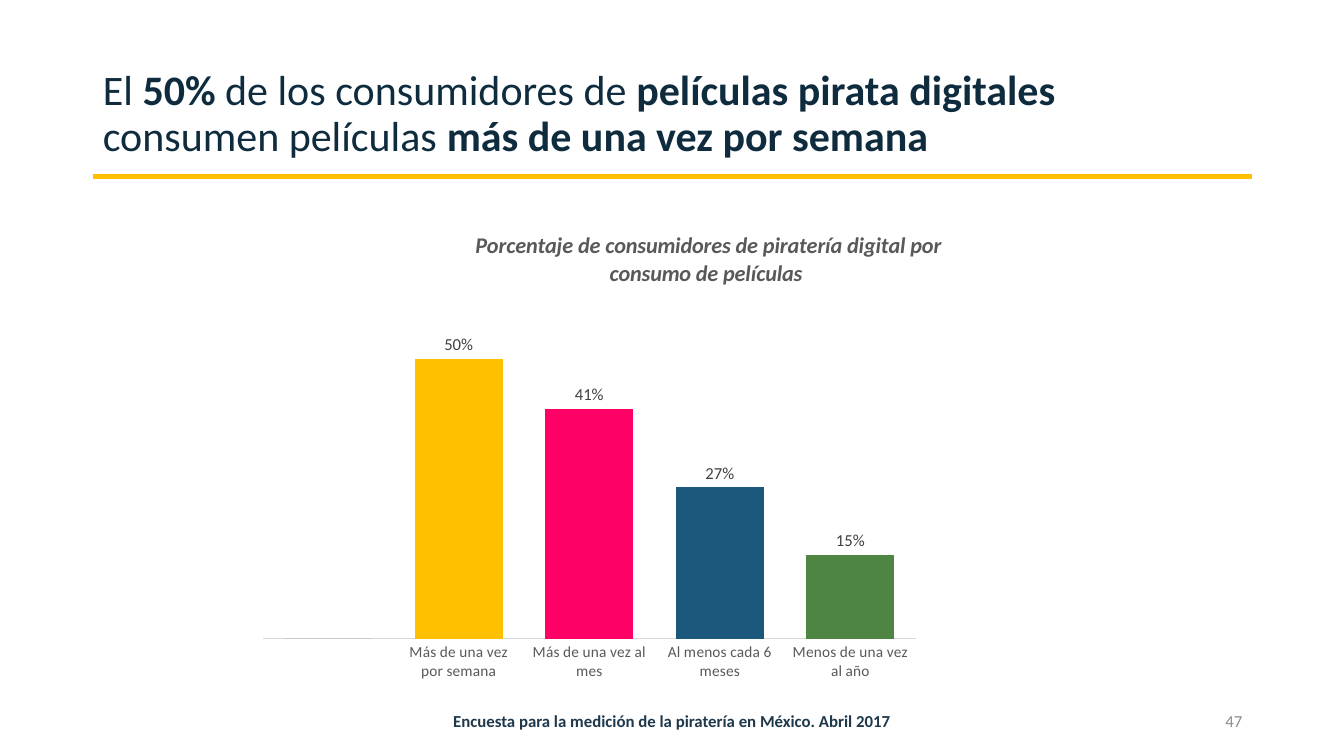
import pptx
import pptx.util
import pptx.chart.data
import pptx.dml.color
import pptx.enum.chart
import pptx.enum.shapes
import pptx.enum.text
import pptx.oxml
import pptx.oxml.ns

WIDTH, HEIGHT = 13.33, 7.5
LEFT, RIGHT, RULE_Y = 0.92, 12.42, 1.75
FONT = "Calibri"
TITLE = [
    ("El ", False),
    ("50%", True),
    (" de los consumidores de ", False),
    ("películas pirata digitales ", True),
    ("consumen películas ", False),
    ("más de una vez por semana", True),
]
CHART_TITLE = "Porcentaje de consumidores de piratería digital por consumo de películas "
BARS = [
    (" ", 0, "604878"),
    ("Más de una vez por semana", 0.5, "FFC000"),
    ("Más de una vez al mes", 0.41, "FF0066"),
    ("Al menos cada 6 meses", 0.27, "1B587C"),
    ("Menos de una vez al año", 0.15, "4E8542"),
]
ALIGN = pptx.enum.text.PP_ALIGN
FOOTERS = [
    ("Encuesta para la medición de la piratería en México. Abril 2017",
     3.99, 5.35, ALIGN.CENTER, "1E384C", True),
    ("47", 9.42, 3, ALIGN.RIGHT, "8C8C8C", False),
]
TITLE_LAYOUT = {"x": 0.32, "y": 0.03}
PLOT_LAYOUT = {"x": 0.02, "y": 0.19, "w": 0.94, "h": 0.7}


def rgb(value):
    """Turn a hex string into a colour."""
    return pptx.dml.color.RGBColor.from_string(value)


def inches(*values):
    """Turn lengths in inches into slide units."""
    return [pptx.util.Inches(v) for v in values]


def set_font(font, size, color, **extra):
    """Apply size, colour and further attributes to a font."""
    values = {"name": FONT, "size": pptx.util.Pt(size), **extra}
    for key, value in values.items():
        setattr(font, key, value)
    font.color.rgb = rgb(color)


def chart_xml(tag, body):
    """Build a chart element from its tag and inner markup."""
    ns = pptx.oxml.ns.nsdecls("c")
    return pptx.oxml.parse_xml(f"<c:{tag} {ns}>{body}</c:{tag}>")


def layout_xml(box, target=""):
    """Build a manual chart layout from shares of the chart's size."""
    modes = "".join(f'<c:{k}Mode val="edge"/>' for k in "xy")
    sizes = "".join(f'<c:{k} val="{v}"/>' for k, v in box.items())
    return chart_xml("layout", f"<c:manualLayout>{target}{modes}{sizes}</c:manualLayout>")


def set_layout(parent, layout, before):
    """Place a layout ahead of the first sibling named in before."""
    for old in parent.findall(pptx.oxml.ns.qn("c:layout")):
        parent.remove(old)
    names = [pptx.oxml.ns.qn(f"c:{n}") for n in before]
    following = next((e for e in parent if e.tag in names), None)
    if following is None:
        parent.append(layout)
    else:
        following.addprevious(layout)


def add_title(slide):
    """Fill the title placeholder and draw the rule below it."""
    sp = slide.shapes.title
    sp.left, sp.top, sp.width, sp.height = inches(LEFT, 0.4, 10.03, 1.24)
    tf = sp.text_frame
    tf.word_wrap = True
    tf.auto_size = pptx.enum.text.MSO_AUTO_SIZE.NONE
    tf.vertical_anchor = pptx.enum.text.MSO_ANCHOR.BOTTOM
    p = tf.paragraphs[0]
    p.alignment, p.line_spacing = ALIGN.LEFT, 0.9
    for text, bold in TITLE:
        r = p.add_run()
        r.text = text
        set_font(r.font, 30, "0E2C3E", bold=bold)
    rule = slide.shapes.add_connector(
        pptx.enum.shapes.MSO_CONNECTOR.STRAIGHT, *inches(LEFT, RULE_Y, RIGHT, RULE_Y))
    rule.line.color.rgb = rgb("FFC000")
    rule.line.width = pptx.util.Pt(3)
    ns = pptx.oxml.ns.nsdecls("a")
    rule._element.spPr.append(pptx.oxml.parse_xml(f"<a:effectLst {ns}/>"))


def add_chart(slide):
    """Add the column chart with one colour per bar."""
    cats, vals, colors = zip(*BARS)
    data = pptx.chart.data.CategoryChartData(number_format="0%")
    data.categories = cats
    data.add_series("Series 1", vals)
    chart = slide.shapes.add_chart(
        pptx.enum.chart.XL_CHART_TYPE.COLUMN_CLUSTERED,
        *inches(2.47, 2.1, 6.93, 4.76), data).chart
    set_font(chart.font, 10, "000000")
    chart.has_legend = False

    tf = chart.chart_title.text_frame
    tf.text = CHART_TITLE
    set_font(tf.paragraphs[0].runs[0].font, 16, "595959", bold=True, italic=True)
    set_layout(chart.chart_title._element, layout_xml(TITLE_LAYOUT),
               ("overlay", "spPr", "txPr"))
    plot_area = chart._chartSpace.chart.plotArea
    set_layout(plot_area, layout_xml(PLOT_LAYOUT, '<c:layoutTarget val="inner"/>'),
               ("barChart",))

    axis = chart.category_axis
    axis.major_tick_mark = pptx.enum.chart.XL_TICK_MARK.NONE
    axis.format.line.color.rgb = rgb("D9D9D9")
    axis.format.line.width = pptx.util.Pt(0.75)
    set_font(axis.tick_labels.font, 11, "595959")
    value_axis = chart.value_axis
    value_axis.minimum_scale, value_axis.maximum_scale = 0, 0.6
    value_axis.has_major_gridlines = False
    value_axis.visible = False

    plot = chart.plots[0]
    plot.gap_width, plot.overlap, plot.vary_by_categories = 48, -27, False
    series = plot.series[0]
    series.format.fill.solid()
    series.format.fill.fore_color.rgb = rgb("FFC000")
    for i, color in enumerate(colors):
        fill = series.points[i].format.fill
        fill.solid()
        fill.fore_color.rgb = rgb(color)
    labels = series.data_labels
    labels.show_value = True
    labels.position = pptx.enum.chart.XL_LABEL_POSITION.OUTSIDE_END
    labels.number_format, labels.number_format_is_linked = "0%", False
    set_font(labels.font, 12, "404040")
    labels._element.insert(0, chart_xml("dLbl", '<c:idx val="0"/><c:delete val="1"/>'))


def add_footer(slide, text, left, width, align, color, bold):
    """Add one text of the bottom row."""
    tf = slide.shapes.add_textbox(*inches(left, 6.95, width, 0.4)).text_frame
    tf.word_wrap = True
    tf.vertical_anchor = pptx.enum.text.MSO_ANCHOR.MIDDLE
    p = tf.paragraphs[0]
    p.alignment = align
    r = p.add_run()
    r.text = text
    set_font(r.font, 12, color, bold=bold)


def main():
    """Build and save the slide."""
    prs = pptx.Presentation()
    prs.slide_width, prs.slide_height = inches(WIDTH, HEIGHT)
    slide = prs.slides.add_slide(prs.slide_layouts.get_by_name("Title Only"))
    add_title(slide)
    add_chart(slide)
    for footer in FOOTERS:
        add_footer(slide, *footer)
    prs.save("out.pptx")


if __name__ == "__main__":
    main()
